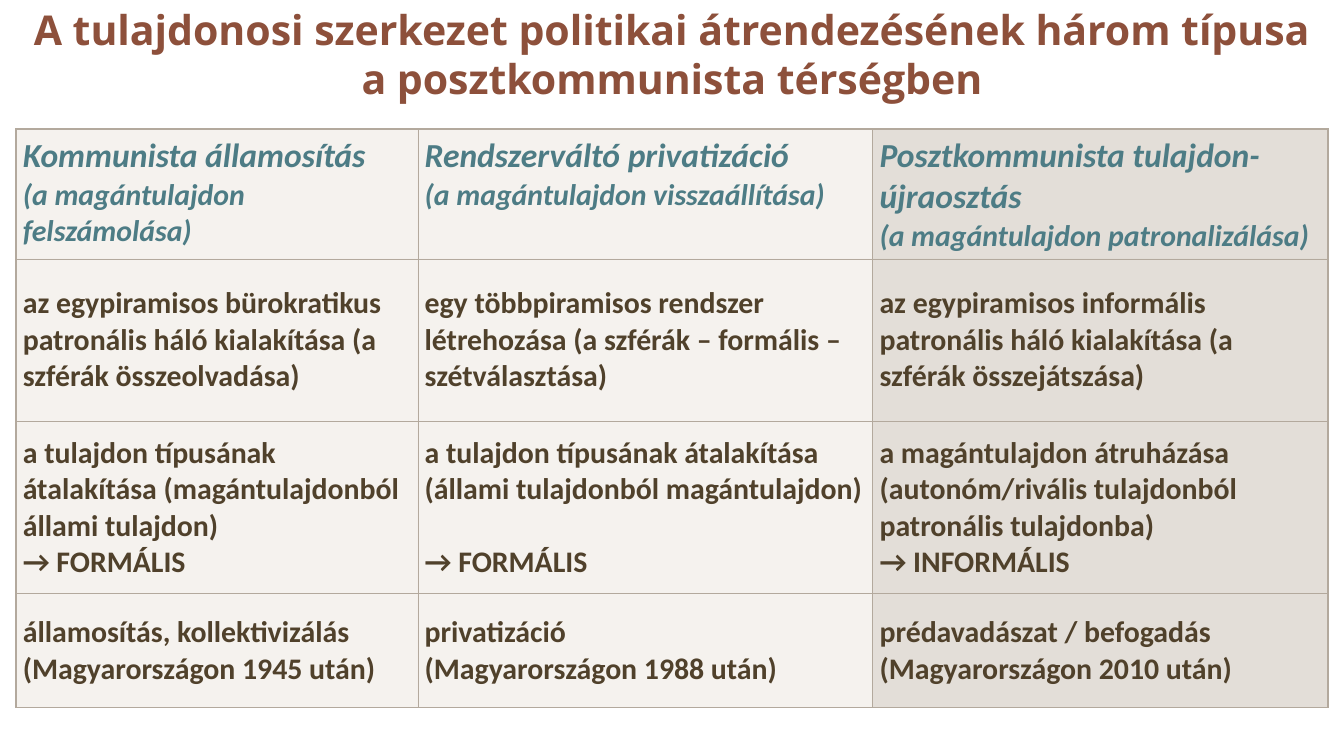
from lxml.etree import SubElement
from pptx import Presentation
from pptx.dml.color import RGBColor
from pptx.enum.text import MSO_ANCHOR, PP_ALIGN
from pptx.oxml.ns import qn
from pptx.util import Inches, Pt

COLORS = {
    "title": "8D503B",
    "heading": "4D7C85",
    "body": "50412B",
    "border": "B3A99D",
    "light": "EFEAE4",
    "dark": "D1C9BE",
}
OPACITY = 60
BODY_SIZE = 16
LINE_GAP = 19.5

TITLE = ("A tulajdonosi szerkezet politikai átrendezésének három típusa "
         "a posztkommunista térségben")
LEFT = 0.12
WIDTH = 9.76
TABLE_HEIGHT = 4.31
FIRST_WIDTH = 2.99
OTHER_WIDTH = (WIDTH - FIRST_WIDTH) / 2
COLUMN_WIDTHS = [FIRST_WIDTH, OTHER_WIDTH, OTHER_WIDTH]
ROW_HEIGHTS = [0.87, 1.21, 1.28, 0.85]
# Each cell is a list of paragraphs; "\n" is a line break within one.
ROWS = [
    [
        ["Kommunista államosítás\n(a magántulajdon felszámolása)"],
        ["Rendszerváltó privatizáció", "(a magántulajdon visszaállítása)"],
        ["Posztkommunista tulajdon-újraosztás\n(a magántulajdon patronalizálása)"],
    ],
    [
        ["az egypiramisos bürokratikus patronális háló kialakítása "
         "(a szférák összeolvadása)"],
        ["egy többpiramisos rendszer létrehozása "
         "(a szférák – formális – szétválasztása)"],
        ["az egypiramisos informális patronális háló kialakítása "
         "(a szférák összejátszása)"],
    ],
    [
        ["a tulajdon típusának átalakítása (magántulajdonból állami tulajdon)",
         "→ FORMÁLIS"],
        ["a tulajdon típusának átalakítása (állami tulajdonból magántulajdon)",
         "→ FORMÁLIS"],
        ["a magántulajdon átruházása (autonóm/rivális tulajdonból "
         "patronális tulajdonba)", "→ INFORMÁLIS"],
    ],
    [
        ["államosítás, kollektivizálás", "(Magyarországon 1945 után)"],
        ["privatizáció", "(Magyarországon 1988 után)"],
        ["prédavadászat / befogadás", "(Magyarországon 2010 után)"],
    ],
]
GAP_CELL = (2, 1)  # its last paragraph lines up with those of its neighbours


def add_run(paragraph, text, font_name, size, color, italic=False):
    run = paragraph.add_run()
    run.text = text
    run.font.name = font_name
    run.font.size = Pt(size)
    run.font.bold = True
    run.font.italic = italic
    run.font.color.rgb = RGBColor.from_string(COLORS[color])
    return run


def add_title(slide):
    box = slide.shapes.add_textbox(Inches(LEFT), Inches(-0.1), Inches(WIDTH), Inches(1))
    frame = box.text_frame
    frame.word_wrap = True
    frame.vertical_anchor = MSO_ANCHOR.MIDDLE
    paragraph = frame.paragraphs[0]
    paragraph.alignment = PP_ALIGN.CENTER
    add_run(paragraph, TITLE, "Open Sans", 22, "title")


def add_color(parent, color):
    fill = SubElement(parent, qn("a:solidFill"))
    return SubElement(fill, qn("a:srgbClr"), val=COLORS[color])


def style_cell(cell, row, column):
    """Set margins, borders and a translucent fill."""
    cell.margin_left = cell.margin_right = Inches(0.05)
    cell.margin_top = cell.margin_bottom = Inches(0.05)
    cell.vertical_anchor = MSO_ANCHOR.TOP if row == 0 else MSO_ANCHOR.MIDDLE
    properties = cell._tc.get_or_add_tcPr()
    last_column = len(COLUMN_WIDTHS) - 1
    thick_sides = {"L": column == 0, "R": column == last_column, "T": row == 0, "B": False}
    for side, thick in thick_sides.items():
        width = Pt(1 if thick else 0.5)
        line = SubElement(properties, qn(f"a:ln{side}"), w=str(width))
        add_color(line, "border")
    color = add_color(properties, "dark" if column == last_column else "light")
    SubElement(color, qn("a:alpha"), val=str(OPACITY * 1000))


def add_heading_break(paragraph):
    """Add a line break as tall as the heading before it."""
    paragraph.add_line_break()
    line_break = paragraph._p.findall(qn("a:br"))[-1]
    SubElement(line_break, qn("a:rPr"), sz="1800", b="1", i="1")


def fill_cell(cell, row, column, paragraphs):
    frame = cell.text_frame
    header = row == 0
    for index, text in enumerate(paragraphs):
        paragraph = frame.add_paragraph() if index else frame.paragraphs[0]
        if index and (row, column) == GAP_CELL:
            paragraph.space_before = Pt(LINE_GAP)
        for line_index, line in enumerate(text.split("\n")):
            if line_index:
                add_heading_break(paragraph)
            size = 18 if header and index + line_index == 0 else BODY_SIZE
            add_run(paragraph, line, "Calibri", size,
                    "heading" if header else "body", italic=header)


def add_comparison_table(slide):
    frame = slide.shapes.add_table(
        len(ROWS), len(COLUMN_WIDTHS), Inches(LEFT), Inches(0.96),
        Inches(WIDTH), Inches(TABLE_HEIGHT))
    table = frame.table
    table.first_row = False
    table.horz_banding = False
    for column, width in zip(table.columns, COLUMN_WIDTHS):
        column.width = Inches(width)
    for row, height in zip(table.rows, ROW_HEIGHTS):
        row.height = Inches(height)
    frame.height = Inches(TABLE_HEIGHT)
    for row, cells in enumerate(ROWS):
        for column, paragraphs in enumerate(cells):
            cell = table.cell(row, column)
            style_cell(cell, row, column)
            fill_cell(cell, row, column, paragraphs)


def main():
    presentation = Presentation()
    presentation.slide_width = Inches(10)
    presentation.slide_height = Inches(10 * 9 / 16)
    slide = presentation.slides.add_slide(presentation.slide_layouts[6])
    add_title(slide)
    add_comparison_table(slide)
    presentation.save("out.pptx")


if __name__ == "__main__":
    main()
